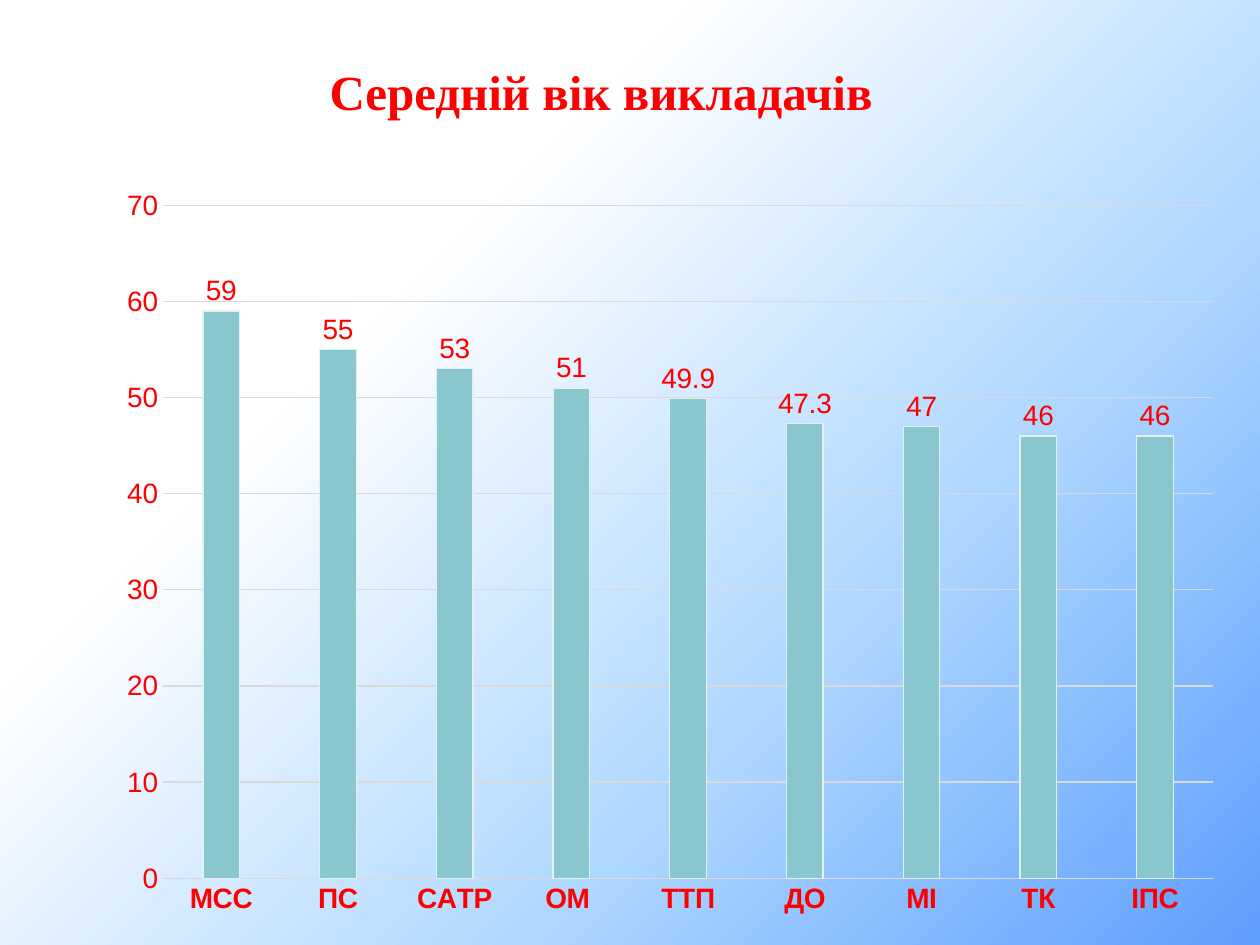
from lxml import etree
from pptx import Presentation
from pptx.chart.data import CategoryChartData
from pptx.dml.color import RGBColor
from pptx.enum.chart import XL_CHART_TYPE as ChartType
from pptx.enum.chart import XL_LABEL_POSITION as LabelPosition
from pptx.enum.chart import XL_TICK_MARK as TickMark
from pptx.enum.text import MSO_ANCHOR as Anchor
from pptx.enum.text import MSO_AUTO_SIZE as AutoSize
from pptx.enum.text import PP_ALIGN as Align
from pptx.oxml.ns import nsdecls, qn
from pptx.util import Inches, Pt

COLORS = {
    "text": "FF0000",
    "bar": "8AC6CD",
    "bar_edge": "E0F1F2",
    "grid": "D9D9D9",
    "deep": "5E9EFF",
    "sky": "AED7FF",
    "white": "FFFFFF",
}
GRADIENT = [(0, "deep", 52), (33, "sky", 70), (69, "white", 100), (100, "white", 0)]
AGES = {
    "МСС": 59, "ПС": 55, "САТР": 53, "ОМ ": 51, "ТТП": 49.9,
    "ДО": 47.3, "МІ": 47, "ТК": 46, "ІПС": 46,
}


def format_font(font, **values):
    for name, value in values.items():
        setattr(font, name, value)
    font.color.rgb = RGBColor.from_string(COLORS["text"])


def format_line(line, color):
    line.width = Pt(0.75)
    line.color.rgb = RGBColor.from_string(COLORS[color])


presentation = Presentation()
presentation.slide_width, presentation.slide_height = Inches(10), Inches(7.5)
width, height = presentation.slide_width, presentation.slide_height
slide = presentation.slides.add_slide(presentation.slide_layouts[5])

stops = "".join(
    f'<a:gs pos="{position * 1000}"><a:srgbClr val="{COLORS[color]}">'
    f'<a:alpha val="{alpha * 1000}"/></a:srgbClr></a:gs>'
    for position, color, alpha in GRADIENT
)
background = etree.fromstring(
    f'<p:bg {nsdecls("p", "a")}><p:bgPr><a:gradFill><a:gsLst>{stops}</a:gsLst>'
    '<a:path path="circle"><a:fillToRect l="100000" t="100000"/></a:path>'
    "</a:gradFill><a:effectLst/></p:bgPr></p:bg>"
)
slide.element.find(qn("p:cSld")).insert(0, background)

title = slide.shapes.title
title.left, title.top = int(width * 0.249), int(height * 0.0587)
title.width, title.height = int(width * 0.456), int(height * 0.076)
title.text = "Середній вік викладачів"
frame_format = {
    "word_wrap": False,
    "auto_size": AutoSize.SHAPE_TO_FIT_TEXT,
    "vertical_anchor": Anchor.TOP,
}
for name, value in frame_format.items():
    setattr(title.text_frame, name, value)
paragraph = title.text_frame.paragraphs[0]
paragraph.alignment = Align.CENTER
format_font(paragraph.runs[0].font, name="Times New Roman", size=Pt(28), bold=True)

chart_data = CategoryChartData()
chart_data.categories = list(AGES)
chart_data.add_series("Середній вік", list(AGES.values()))
chart = slide.shapes.add_chart(
    ChartType.COLUMN_CLUSTERED,
    int(width * 0.083), int(height * 0.1853),
    int(width * 0.898), int(height * 0.7973),
    chart_data,
).chart
chart.has_legend = False
chart.has_title = False
format_font(chart.font, name="Arial", size=Pt(16))

for axis, bold in ((chart.category_axis, True), (chart.value_axis, False)):
    axis.major_tick_mark = axis.minor_tick_mark = TickMark.NONE
    format_font(axis.tick_labels.font, name="Arial", size=Pt(16), bold=bold)
format_line(chart.category_axis.format.line, "grid")

value_format = {"minimum_scale": 0, "maximum_scale": 70, "major_unit": 10}
for name, value in value_format.items():
    setattr(chart.value_axis, name, value)
chart.value_axis.format.line.fill.background()
format_line(chart.value_axis.major_gridlines.format.line, "grid")

plot = chart.plots[0]
plot_format = {
    "gap_width": 219,
    "overlap": -27,
    "vary_by_categories": False,
    "has_data_labels": True,
}
for name, value in plot_format.items():
    setattr(plot, name, value)
plot.data_labels.show_value = True
plot.data_labels.position = LabelPosition.OUTSIDE_END
format_font(plot.data_labels.font, name="Arial", size=Pt(16), bold=False)

bars = plot.series[0].format
bars.fill.solid()
bars.fill.fore_color.rgb = RGBColor.from_string(COLORS["bar"])
format_line(bars.line, "bar_edge")

presentation.save("out.pptx")
